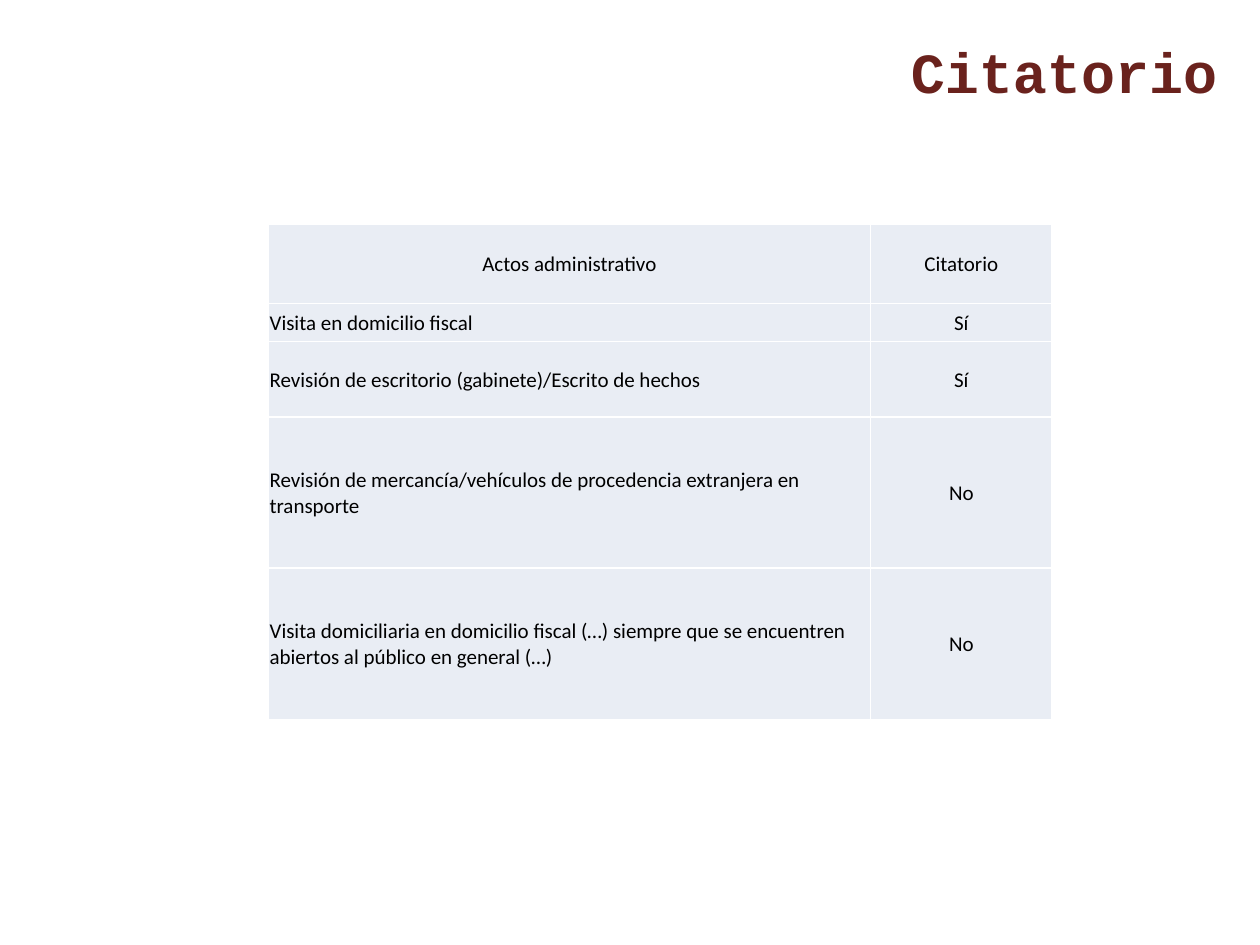
from lxml.etree import SubElement
from pptx import Presentation
from pptx.dml.color import RGBColor
from pptx.enum.text import MSO_ANCHOR, MSO_AUTO_SIZE, PP_ALIGN
from pptx.oxml.ns import qn
from pptx.util import Inches, Pt

MAROON = RGBColor(0x6A, 0x22, 0x1D)
BLACK = RGBColor(0x00, 0x00, 0x00)
WHITE = RGBColor(0xFF, 0xFF, 0xFF)
PALE_BLUE = RGBColor(0xE9, 0xED, 0xF4)

HEADER = ("Actos administrativo", "Citatorio")
ACTS = [
    ("Visita en domicilio fiscal", "Sí"),
    ("Revisión de escritorio (gabinete)/Escrito de hechos", "Sí"),
    ("Revisión de mercancía/vehículos de procedencia extranjera en transporte", "No"),
    ("Visita domiciliaria en domicilio fiscal (…) siempre que se encuentren "
     "abiertos al público en general (…)", "No"),
]
COLUMN_WIDTHS = (4.78, 1.44)
ROW_HEIGHTS = (0.63, 0.3, 0.6, 1.2, 1.2)


def set_font(font, name, size, color, bold=False):
    font.name = name
    font.size = Pt(size)
    font.bold = bold
    font.color.rgb = color


def add_title(slide, wording):
    title = slide.shapes.title
    place = {"left": 6.89, "top": 0.24, "width": 2.87, "height": 0.64}
    for side, length in place.items():
        setattr(title, side, Inches(length))
    frame = title.text_frame
    frame.text = wording
    frame.auto_size = MSO_AUTO_SIZE.NONE
    frame.vertical_anchor = MSO_ANCHOR.MIDDLE
    heading = frame.paragraphs[0]
    heading.alignment = PP_ALIGN.RIGHT
    set_font(heading.runs[0].font, "Courier New", 32.4, MAROON, bold=True)


def add_borders(cell, color, width):
    """Draw all four cell edges; they must come before the fill in tcPr."""
    properties = cell._tc.get_or_add_tcPr()
    for edge in ("a:lnL", "a:lnR", "a:lnT", "a:lnB"):
        line = SubElement(properties, qn(edge), w=str(Pt(width)))
        fill = SubElement(line, qn("a:solidFill"))
        SubElement(fill, qn("a:srgbClr"), val=str(color))


def fill_cell(cell, wording, alignment):
    add_borders(cell, WHITE, 1)
    cell.fill.solid()
    cell.fill.fore_color.rgb = PALE_BLUE
    cell.vertical_anchor = MSO_ANCHOR.MIDDLE
    margins = {"left": 0.01, "right": 0.01, "top": 0.01, "bottom": 0}
    for side, length in margins.items():
        setattr(cell, f"margin_{side}", Inches(length))
    cell.text = wording
    paragraph = cell.text_frame.paragraphs[0]
    paragraph.alignment = alignment
    set_font(paragraph.runs[0].font, "Calibri", 12, BLACK)


def add_acts_table(slide):
    rows = [HEADER, *ACTS]
    table = slide.shapes.add_table(
        len(rows), len(HEADER), Inches(2.13), Inches(1.78),
        Inches(sum(COLUMN_WIDTHS)), Inches(sum(ROW_HEIGHTS))).table
    table.first_row = table.horz_banding = False
    for column, width in zip(table.columns, COLUMN_WIDTHS):
        column.width = Inches(width)
    for row, height in zip(table.rows, ROW_HEIGHTS):
        row.height = Inches(height)
    for r, row in enumerate(rows):
        for c, wording in enumerate(row):
            is_act = r > 0 and c == 0
            fill_cell(table.cell(r, c), wording,
                      PP_ALIGN.LEFT if is_act else PP_ALIGN.CENTER)


def main():
    deck = Presentation()
    deck.slide_width = Inches(10)
    deck.slide_height = Inches(7.5)
    slide = deck.slides.add_slide(deck.slide_layouts[5])
    add_title(slide, "Citatorio")
    add_acts_table(slide)
    deck.save("out.pptx")


if __name__ == "__main__":
    main()
